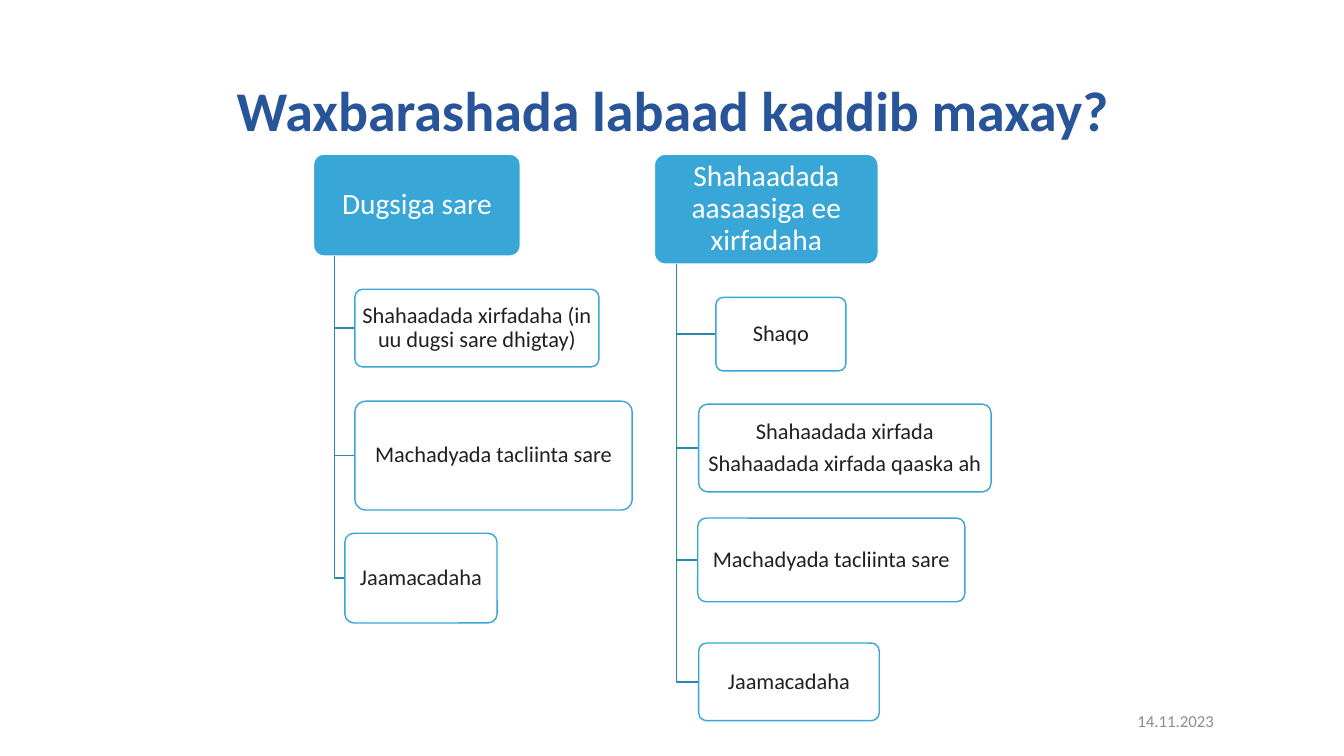
from pptx import Presentation
from pptx.dml.color import RGBColor
from pptx.enum.shapes import MSO_SHAPE
from pptx.enum.text import MSO_ANCHOR, MSO_AUTO_SIZE, PP_ALIGN
from pptx.util import Inches, Pt
from lxml import etree

ROUNDED = MSO_SHAPE.ROUNDED_RECTANGLE
MIDDLE = MSO_ANCHOR.MIDDLE
NO_FIT = MSO_AUTO_SIZE.NONE
CENTER, RIGHT = PP_ALIGN.CENTER, PP_ALIGN.RIGHT
DRAWING = "{http://schemas.openxmlformats.org/drawingml/2006/main}"


class Theme:
    font = "Calibri"
    navy = RGBColor.from_string("28549A")
    blue = RGBColor.from_string("38A7D7")
    elbow = RGBColor.from_string("2D86AC")
    ink = RGBColor.from_string("212121")
    gray = RGBColor.from_string("8D8D8D")
    white = RGBColor.from_string("FFFFFF")
    title_size, head_size, item_size, date_size = 40, 21, 16, 12


def write(frame, text, size, color, bold=False, align=CENTER, inset=0.03, spacing=0.9):
    """Fill a text frame, one paragraph per line of text."""
    frame.word_wrap = True
    frame.auto_size = NO_FIT
    frame.vertical_anchor = MIDDLE
    frame.margin_left = frame.margin_right = Inches(inset)
    frame.margin_top = frame.margin_bottom = Inches(inset)
    frame.text = text
    for index, para in enumerate(frame.paragraphs):
        para.alignment = align
        para.line_spacing = spacing
        para.space_before = Pt(0.35 * size if index else 0)
        for span in para.runs:
            span.font.name = Theme.font
            span.font.size = Pt(size)
            span.font.bold = bold
            span.font.color.rgb = color


def add_box(page, place, text, size, fill, line, color):
    """Add a rounded box that carries its own text."""
    box = page.shapes.add_shape(ROUNDED, *map(Inches, place))
    box.adjustments[0] = 0.1
    box.shadow.inherit = False
    box.fill.solid()
    box.fill.fore_color.rgb = fill
    box.line.color.rgb = line
    box.line.width = Pt(1)
    write(box.text_frame, text, size, color)
    return box


deck = Presentation()
deck.slide_width, deck.slide_height = Inches(13.33), Inches(7.5)
page = deck.slides.add_slide(deck.slide_layouts[5])

# Title
title = page.shapes.title
title.left, title.top, title.width, title.height = map(Inches, (0.92, 0.4, 11.5, 1.45))
write(title.text_frame, "Waxbarashada labaad kaddib maxay?", Theme.title_size,
      Theme.navy, bold=True, inset=0.1)

# Date
date = page.shapes.add_textbox(*map(Inches, (10.94, 6.95, 1.2, 0.4)))
write(date.text_frame, "14.11.2023", Theme.date_size, Theme.gray,
      align=RIGHT, inset=0.1, spacing=1.0)

# Each branch: head box, then its items (left, top, width, height)
branches = [
    ("Dugsiga sare", (3.11, 1.53, 2.05, 1.01), [
        ("Shahaadada xirfadaha (in uu dugsi sare dhigtay)", (3.52, 2.87, 2.42, 0.77)),
        ("Machadyada tacliinta sare", (3.52, 3.98, 2.75, 1.08)),
        ("Jaamacadaha", (3.42, 5.29, 1.51, 0.89)),
    ]),
    ("Shahaadada aasaasiga ee xirfadaha", (6.49, 1.53, 2.22, 1.09), [
        ("Shaqo", (7.1, 2.95, 1.29, 0.73)),
        ("Shahaadada xirfada\nShahaadada xirfada qaaska ah", (6.93, 4.01, 2.9, 0.87)),
        ("Machadyada tacliinta sare", (6.92, 5.14, 2.65, 0.83)),
        ("Jaamacadaha", (6.93, 6.38, 1.79, 0.77)),
    ]),
]

for head_text, head_place, items in branches:
    head = add_box(page, head_place, head_text, Theme.head_size,
                   Theme.blue, Theme.white, Theme.white)
    trunk_x = head.left + head.width // 10
    trunk_top = head.top + head.height

    for item_text, item_place in items:
        # Elbow from the head down and across to the item
        left, top, width, height = map(Inches, item_place)
        middle = top + height // 2
        builder = page.shapes.build_freeform(trunk_x, trunk_top)
        builder.add_line_segments([(trunk_x, middle), (left, middle)], close=False)
        elbow = builder.convert_to_shape()
        elbow.shadow.inherit = False
        elbow.fill.background()
        elbow.line.color.rgb = Theme.elbow
        elbow.line.width = Pt(1)

        # Item box, slightly see-through
        item = add_box(page, item_place, item_text, Theme.item_size,
                       Theme.white, Theme.blue, Theme.ink)
        fill_color = item._element.spPr.find(f"{DRAWING}solidFill")[0]
        etree.SubElement(fill_color, f"{DRAWING}alpha", val="90000")

deck.save("out.pptx")
